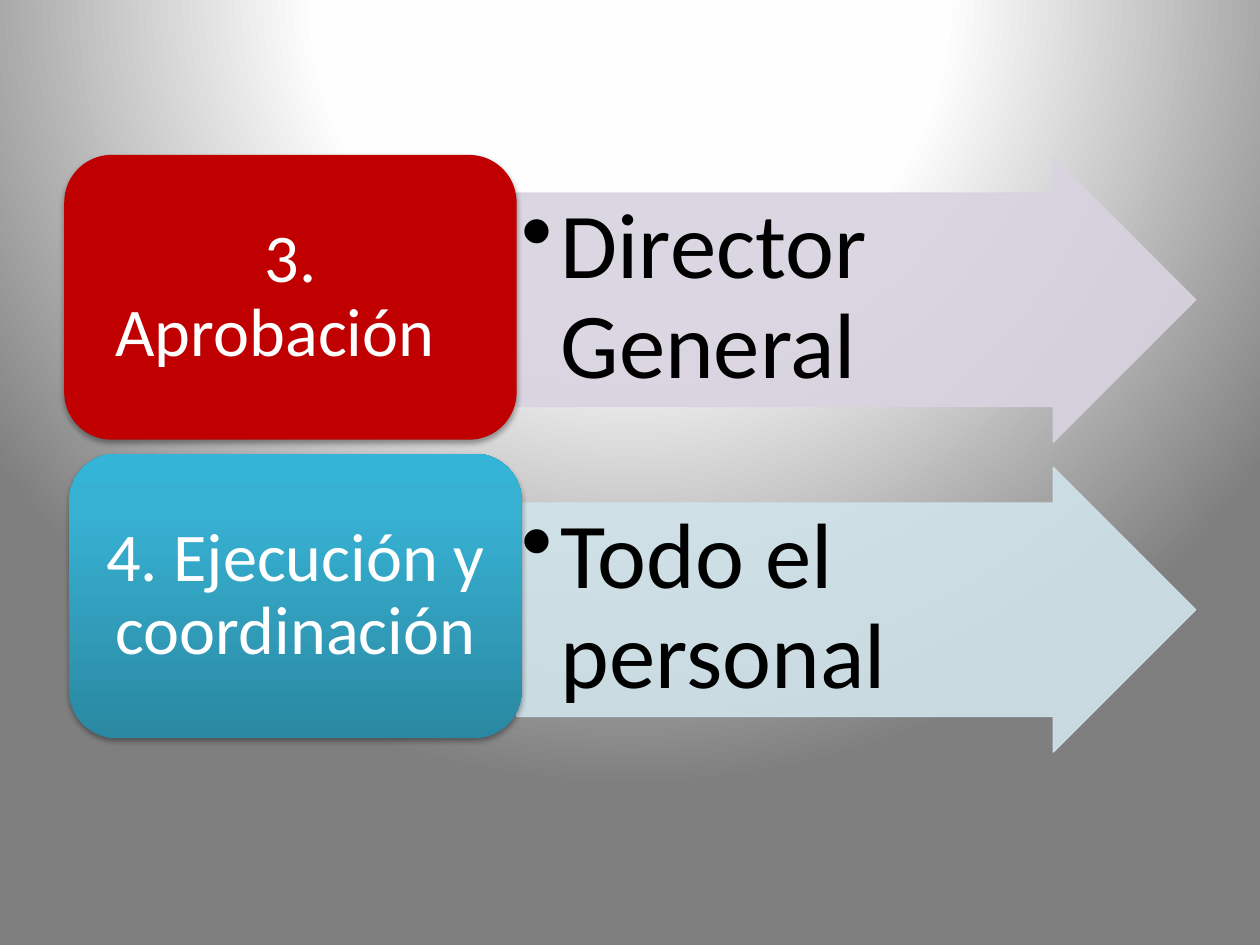
from lxml import etree
from pptx import Presentation
from pptx.dml.color import RGBColor
from pptx.enum.shapes import MSO_SHAPE
from pptx.enum.text import MSO_ANCHOR, PP_ALIGN
from pptx.oxml import parse_xml
from pptx.oxml.ns import nsdecls, qn
from pptx.util import Inches, Pt

ARROW, ROUNDED = MSO_SHAPE.RIGHT_ARROW, MSO_SHAPE.ROUNDED_RECTANGLE
TOP, MIDDLE = MSO_ANCHOR.TOP, MSO_ANCHOR.MIDDLE
LEFT, CENTER = PP_ALIGN.LEFT, PP_ALIGN.CENTER

COLORS = {
    "lilac": "D8D3E0", "pale_blue": "D0E3EA", "red": "C00000",
    "teal_dark": "2A88A2", "teal": "37B1D2", "teal_light": "34B4D6",
    "white": "FFFFFF", "near_white": "FEFEFE", "gray": "7F7F7F", "black": "000000",
}
TEAL_STOPS = [(0, "teal_dark"), (80, "teal"), (100, "teal_light")]
BACKGROUND_STOPS = [(0, "white"), (40, "near_white"), (100, "gray")]
UPWARD = '<a:lin ang="16200000" scaled="0"/>'
FROM_ABOVE = '<a:path path="circle"><a:fillToRect l="50000" t="-80000" r="50000" b="180000"/></a:path>'


class SlideBuilder:
    font = "Calibri"
    block_height = 2.26

    def __init__(self, slide):
        self.slide = slide
        self.shapes = slide.shapes.add_group_shape().shapes

    def color(self, name):
        return RGBColor.from_string(COLORS[name])

    def set_gradient(self, properties, stops, direction):
        """Replace the solid fill inside a properties element with a gradient."""
        stop_xml = "".join(
            f'<a:gs pos="{position * 1000}"><a:srgbClr val="{COLORS[name]}"/></a:gs>'
            for position, name in stops)
        gradient = parse_xml(
            f'<a:gradFill {nsdecls("a")} rotWithShape="1">'
            f'<a:gsLst>{stop_xml}</a:gsLst>{direction}</a:gradFill>')
        properties.replace(properties.find(qn("a:solidFill")), gradient)

    def background(self, stops, direction):
        self.slide.background.fill.solid()
        properties = next(self.slide.element.iter(qn("p:bgPr")))
        self.set_gradient(properties, stops, direction)

    def block(self, kind, left, top, width, fill):
        shape = self.shapes.add_shape(
            kind, Inches(left), Inches(top), Inches(width), Inches(self.block_height))
        shape.shadow.inherit = False
        shape.fill.solid()
        shape.fill.fore_color.rgb = self.color(fill)
        return shape

    def add_text(self, shape, text, size, color, margins, anchor, alignment):
        frame = shape.text_frame
        frame.word_wrap = True
        frame.vertical_anchor = anchor
        (frame.margin_left, frame.margin_top,
         frame.margin_right, frame.margin_bottom) = map(Inches, margins)
        paragraph = frame.paragraphs[0]
        paragraph.alignment = alignment
        paragraph.line_spacing = 0.9
        run = paragraph.add_run()
        run.text = text
        run.font.name = self.font
        run.font.size = Pt(size)
        run.font.color.rgb = self.color(color)
        return paragraph

    def arrow(self, top, fill, text):
        shape = self.block(ARROW, 4.1, top, 5.39, fill)
        shape.adjustments[0], shape.adjustments[1] = 0.75, 0.5
        shape.line.color.rgb = self.color(fill)
        shape.line.width = Pt(0.75)
        for color in shape.element.spPr.iter(qn("a:srgbClr")):
            etree.SubElement(color, qn("a:alpha"), val="90000")
        paragraph = self.add_text(shape, text, 53, "black", (0.04, 0.04, 0.61, 0.04), TOP, LEFT)
        paragraph.level = 1
        properties = paragraph._p.get_or_add_pPr()
        properties.set("marL", str(Inches(0.31)))
        properties.set("indent", str(Inches(-0.31)))
        etree.SubElement(properties, qn("a:buChar"), char="•")

    def step(self, left, top, fill, text, side_margin, stops=None):
        shape = self.block(ROUNDED, left, top, 3.59, fill)
        shape.line.fill.background()
        properties = shape.element.spPr
        if stops:
            self.set_gradient(properties, stops, UPWARD)
        shadow = etree.SubElement(
            properties.find(qn("a:effectLst")), qn("a:outerShdw"), blurRad=str(Pt(3.1)),
            dist=str(Pt(1.8)), dir="5400000", rotWithShape="0")
        color = etree.SubElement(shadow, qn("a:srgbClr"), val=COLORS["black"])
        etree.SubElement(color, qn("a:alpha"), val="35000")
        margins = (side_margin, 0.08, side_margin, 0.08)
        self.add_text(shape, text, 39, "white", margins, MIDDLE, CENTER)


def main():
    presentation = Presentation()
    presentation.slide_width, presentation.slide_height = Inches(10), Inches(7.5)
    builder = SlideBuilder(presentation.slides.add_slide(presentation.slide_layouts[6]))
    builder.background(BACKGROUND_STOPS, FROM_ABOVE)
    builder.arrow(1.25, "lilac", "Director General")
    builder.step(0.51, 1.23, "red", "3. Aprobación  ", 0.25)
    builder.arrow(3.71, "pale_blue", "Todo el personal")
    builder.step(0.55, 3.6, "teal", "4. Ejecución y coordinación", 0.16, TEAL_STOPS)
    presentation.save("out.pptx")


if __name__ == "__main__":
    main()
